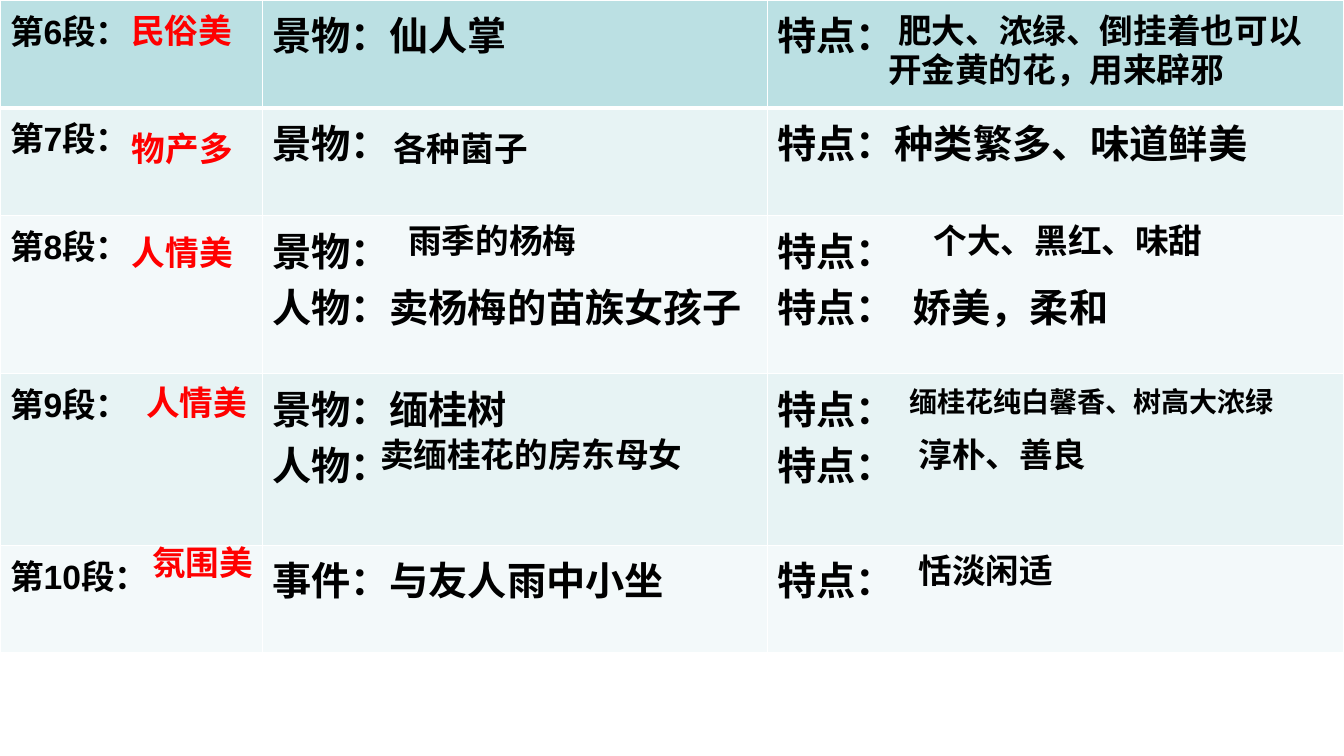
from lxml import etree
from pptx import Presentation
from pptx import util as u
from pptx.dml.color import RGBColor
from pptx.enum import text
from pptx.oxml import ns

RED, BLACK, WHITE = "FF0000", "000000", "FFFFFF"
HEAD, BAND, PALE = "BBE0E3", "E7F3F4", "F3F9FA"
CJK = "Noto Sans CJK SC"


def rgb(code):
    return RGBColor.from_string(code)


class Deck:
    def __init__(self, slide):
        self.slide = slide

    def run(self, para, words, size, color=BLACK, face="Arial"):
        run = para.add_run()
        run.text = words
        font = run.font
        font.size, font.bold, font.name = u.Pt(size), True, face
        font.color.rgb = rgb(color)
        east = etree.SubElement(run._r.get_or_add_rPr(), ns.qn("a:ea"))
        east.set("typeface", CJK)

    def note(self, left, top, width, height, words, color=BLACK, size=24):
        box = self.slide.shapes.add_textbox(*map(u.Inches, (left, top, width, height)))
        frame = box.text_frame
        frame.word_wrap = True
        frame.auto_size = text.MSO_AUTO_SIZE.NONE
        para = frame.paragraphs[0]
        para.line_spacing = 0.9
        self.run(para, " ", 32, "FC3634", CJK)
        self.run(para, words, size, color)

    def edge(self, cell, side, width):
        props = cell._tc.get_or_add_tcPr()
        line = etree.SubElement(props, ns.qn("a:ln" + side), w=str(u.Pt(width)))
        fill = etree.SubElement(line, ns.qn("a:solidFill"))
        etree.SubElement(fill, ns.qn("a:srgbClr"), val=WHITE)

    def tab(self, para, place):
        stops = etree.SubElement(para._p.get_or_add_pPr(), ns.qn("a:tabLst"))
        etree.SubElement(stops, ns.qn("a:tab"), pos=str(u.Inches(place)), algn="l")

    def cell(self, cell, lines, size, fill, above, below):
        for side, width in zip("LRTB", (1, 1, above, below)):
            self.edge(cell, side, width)
        cell.fill.solid()
        cell.fill.fore_color.rgb = rgb(fill)
        frame = cell.text_frame
        for i, words in enumerate(lines):
            para = frame.add_paragraph() if i else frame.paragraphs[0]
            if "\t" in words:
                self.tab(para, 1.34)
            self.run(para, words, size)

    def table(self, rows, wide, tall):
        size = map(u.Inches, (0, 0, sum(wide), sum(tall)))
        grid = self.slide.shapes.add_table(len(tall), len(wide), *size).table
        grid.first_row = grid.horz_banding = False
        for col, width in zip(grid.columns, wide):
            col.width = u.Inches(width)
        for r, (height, row) in enumerate(zip(tall, rows)):
            grid.rows[r].height = u.Inches(height)
            fill = HEAD if r == 0 else BAND if r % 2 else PALE
            above, below = 3 if r == 1 else 1, 3 if r == 0 else 1
            for c, lines in enumerate(([f"第{r + 6}段："], *row)):
                self.cell(grid.cell(r, c), lines, 28 if c else 24, fill, above, below)


ROWS = [
    (["景物：仙人掌"], ["特点："]),
    (["景物："], ["特点：种类繁多、味道鲜美"]),
    (["景物：", "人物：卖杨梅的苗族女孩子"], ["特点：", "特点：\t娇美，柔和"]),
    (["景物：缅桂树", "人物："], ["特点：", "特点："]),
    (["事件：与友人雨中小坐"], ["特点："]),
]
NOTES = [
    (8.71, 0, 4.51, 1, "肥大、浓绿、倒挂着也可以开金黄的花，用来辟邪"),
    (1.1, 0, 1.58, 0.73, "民俗美", RED),
    (3.7, 1.17, 2.25, 0.5, "各种菌子"),
    (1.11, 1.17, 1.36, 0.5, "物产多", RED),
    (9.06, 2.08, 4.18, 0.5, "个大、黑红、味甜"),
    (1.11, 2.2, 1.36, 0.5, "人情美", RED),
    (3.85, 2.08, 2.24, 0.5, "雨季的杨梅"),
    (1.25, 3.69, 1.44, 0.5, "人情美", RED),
    (3.57, 4.2, 3.4, 0.5, "卖缅桂花的房东母女"),
    (8.82, 3.66, 4.24, 0.5, "缅桂花纯白馨香、树高大浓绿", BLACK, 20),
    (8.91, 4.2, 2.43, 0.5, "淳朴、善良"),
    (8.91, 5.36, 2.04, 0.5, "恬淡闲适"),
    (1.31, 5.28, 1.44, 0.5, "氛围美", RED),
]


def main():
    show = Presentation()
    show.slide_width, show.slide_height = u.Inches(13.33), u.Inches(7.5)
    deck = Deck(show.slides.add_slide(show.slide_layouts[6]))
    deck.table(ROWS, (2.6, 5.01, 5.72), (1.07, 1.07, 1.57, 1.7, 1.07))
    for note in NOTES:
        deck.note(*note)
    show.save("out.pptx")


if __name__ == "__main__":
    main()
